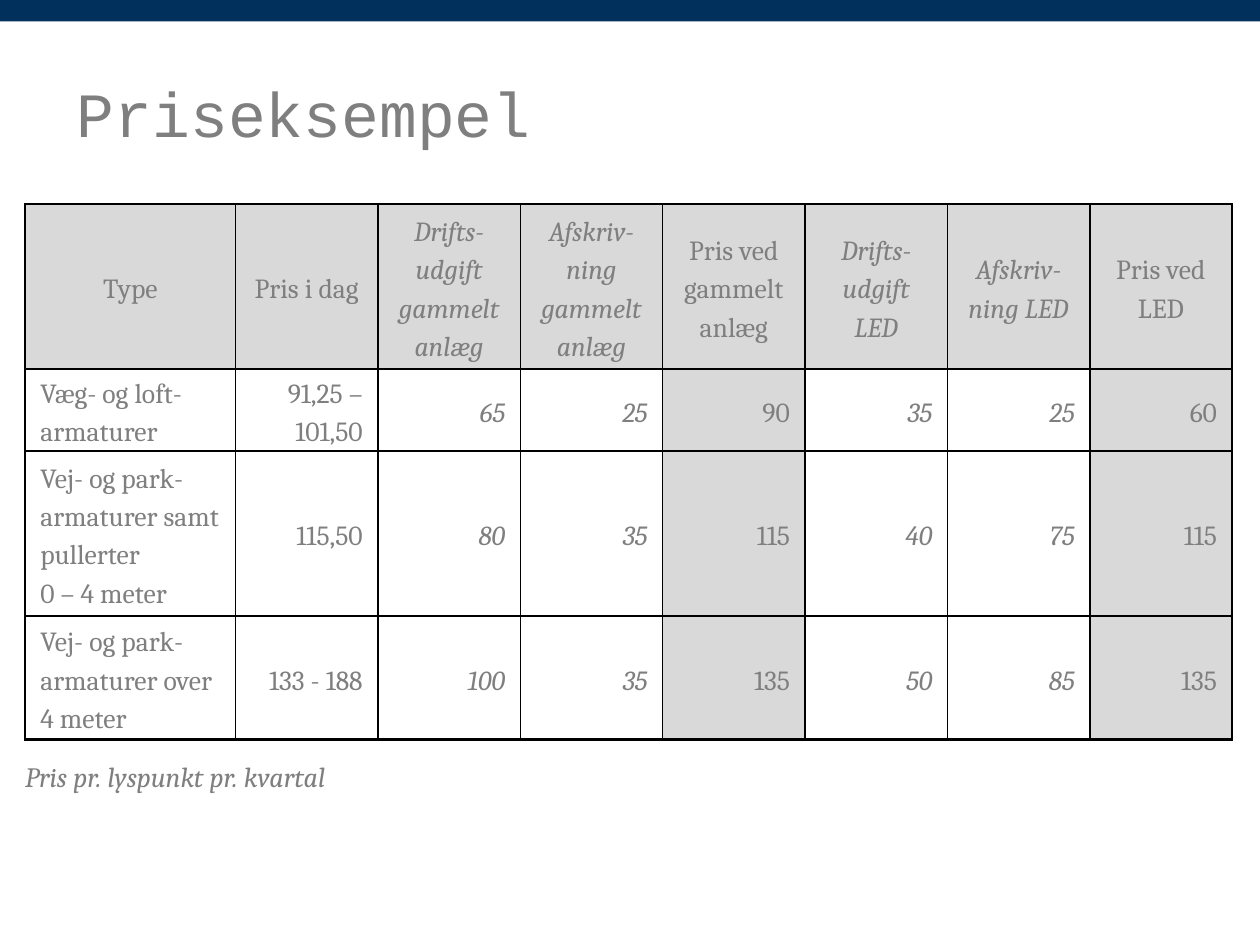
from lxml import etree
from pptx import Presentation
from pptx.dml.color import RGBColor
from pptx.enum.shapes import MSO_SHAPE
from pptx.enum.text import MSO_ANCHOR, PP_ALIGN
from pptx.oxml.ns import qn
from pptx.util import Inches, Pt

RECT = MSO_SHAPE.RECTANGLE
TOP, MIDDLE = MSO_ANCHOR.TOP, MSO_ANCHOR.MIDDLE
LEFT, CENTER, RIGHT = PP_ALIGN.LEFT, PP_ALIGN.CENTER, PP_ALIGN.RIGHT

COLORS = {"bar": "00305B", "text": "7F7F7F", "shade": "D9D9D9", "line": "000000"}
BODY, MONO = "Cambria", "Courier New"

ROWS = [
    ["Type", "Pris i dag", "Drifts-udgift gammelt anlæg",
     "Afskriv-ning gammelt anlæg", "Pris ved gammelt anlæg",
     "Drifts-udgift\nLED", "Afskriv-ning LED", "Pris ved\nLED"],
    ["Væg- og loft-armaturer", "91,25 – 101,50", "65", "25", "90", "35", "25", "60"],
    ["Vej- og park-armaturer samt pullerter \v0 – 4 meter",
     "115,50", "80", "35", "115", "40", "75", "115"],
    ["Vej- og park-armaturer over 4 meter",
     "133 - 188", "100", "35", "135", "50", "85", "135"],
]
WIDTHS = [1.67] + [1.13] * 7
HEIGHTS = [1.31, 0.65, 1.31, 0.98]
ITALIC = {2, 3, 5, 6}
SHADED = {4, 7}


def color(name):
    return RGBColor.from_string(COLORS[name])


def style(frame, face, size, italic=False, align=LEFT, space=None):
    for par in frame.paragraphs:
        par.alignment = align
        par.line_spacing = space
        for run in par.runs:
            font = run.font
            font.name, font.size, font.italic = face, Pt(size), italic
            font.color.rgb = color("text")


def add_border(cell, side, width):
    line = etree.SubElement(cell._tc.get_or_add_tcPr(), qn(f"a:ln{side}"),
                            w=str(Pt(width)))
    fill = etree.SubElement(line, qn("a:solidFill"))
    etree.SubElement(fill, qn("a:srgbClr"), val=COLORS["line"])


def add_bar(slide, x, y, w, h):
    bar = slide.shapes.add_shape(RECT, Inches(x), Inches(y), Inches(w), Inches(h))
    bar.shadow.inherit = False
    bar.fill.solid()
    bar.fill.fore_color.rgb = color("bar")
    bar.line.fill.background()


def set_title(slide, x, y, w, h):
    title = slide.shapes.title
    title.left, title.top = Inches(x), Inches(y)
    title.width, title.height = Inches(w), Inches(h)
    frame = title.text_frame
    frame.text = "Priseksempel"
    frame.vertical_anchor = TOP
    style(frame, MONO, 36, space=0.83)


def fill_cell(cell, text, row, col):
    # Outer edges are heavier than inner ones
    edges = {"L": col == 0, "R": col == len(WIDTHS) - 1,
             "T": row == 0, "B": row == len(ROWS) - 1}
    for side, outer in edges.items():
        add_border(cell, side, 1.5 if outer else 1)
    if row == 0 or col in SHADED:
        cell.fill.solid()
        cell.fill.fore_color.rgb = color("shade")
    else:
        cell.fill.background()
    cell.margin_left = cell.margin_right = Inches(0.12)
    cell.margin_top = cell.margin_bottom = 0
    cell.vertical_anchor = MIDDLE
    cell.text_frame.text = text
    align = CENTER if row == 0 else LEFT if col == 0 else RIGHT
    style(cell.text_frame, BODY, 15.8, col in ITALIC, align, 1.2)


def add_prices(slide, x, y):
    table = slide.shapes.add_table(
        len(ROWS), len(WIDTHS), Inches(x), Inches(y),
        Inches(sum(WIDTHS)), Inches(sum(HEIGHTS))).table
    table.first_row = table.horz_banding = False
    for col, width in zip(table.columns, WIDTHS):
        col.width = Inches(width)
    for row, height in zip(table.rows, HEIGHTS):
        row.height = Inches(height)
    for r, texts in enumerate(ROWS):
        for c, text in enumerate(texts):
            fill_cell(table.cell(r, c), text, r, c)


def add_note(slide, x, y, w, h):
    box = slide.shapes.add_textbox(Inches(x), Inches(y), Inches(w), Inches(h))
    frame = box.text_frame
    frame.word_wrap = True
    frame.margin_left = frame.margin_right = 0
    frame.margin_top = frame.margin_bottom = 0
    frame.text = "Pris pr. lyspunkt pr. kvartal"
    style(frame, BODY, 16, italic=True)


def main():
    prs = Presentation()
    prs.slide_width, prs.slide_height = Inches(10), Inches(7.5)
    slide = prs.slides.add_slide(prs.slide_layouts[5])
    add_bar(slide, 0, 0, 10, 0.17)
    set_title(slide, 0.51, 0.64, 8.94, 1.22)
    add_prices(slide, 0.2, 1.62)
    add_note(slide, 0.2, 6.03, 9.53, 0.27)
    prs.save("out.pptx")


if __name__ == "__main__":
    main()
